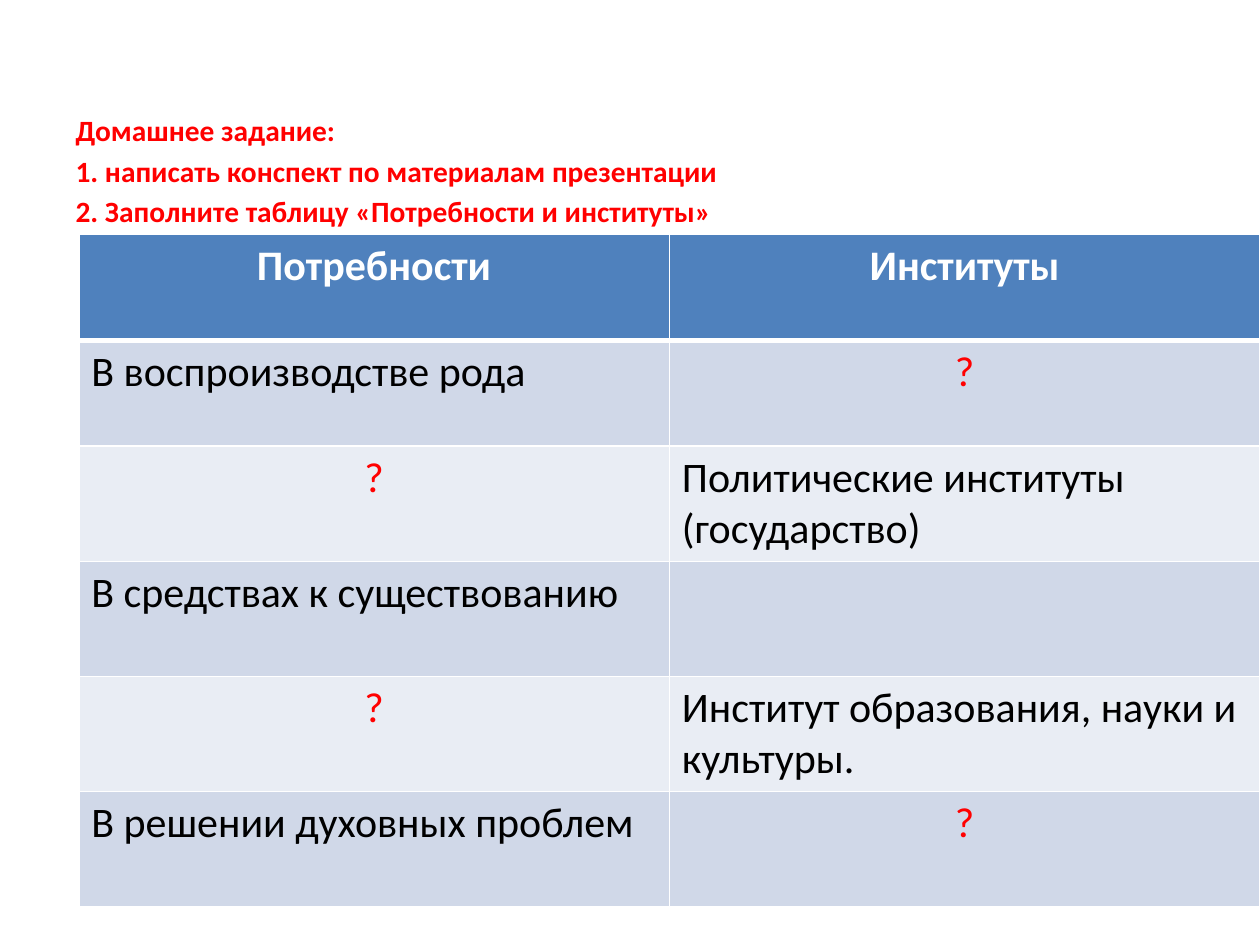
from pptx import Presentation
from pptx.dml.color import RGBColor
from pptx.enum.text import MSO_AUTO_SIZE, PP_ALIGN
from pptx.oxml.ns import qn
from pptx.util import Pt
from lxml.etree import SubElement

theme = {
    "font": "Calibri", "task": 16.8, "cell": 24,
    "red": "FF0000", "white": "FFFFFF", "black": "000000",
    "head": "4F81BD", "bands": ("E9EDF4", "D0D8E8"),
}
tasks = (
    "Домашнее задание:",
    "1. написать конспект по материалам презентации",
    "2. Заполните таблицу «Потребности и институты»",
)
rows = (
    ("Потребности", "Институты"),
    ("В воспроизводстве рода", "?"),
    ("?", "Политические институты (государство)"),
    ("В средствах к существованию", ""),
    ("?", "Институт образования, науки и культуры."),
    ("В решении духовных проблем", "?"),
)
highs = (60.5, 60.5, 65.7, 65.7, 65.7, 65.7)


def style(font, size, color, bold):
    form = {"name": theme["font"], "size": Pt(size), "bold": bold}
    for key, value in form.items():
        setattr(font, key, value)
    font.color.rgb = RGBColor.from_string(color)


def edge(cell, side, width):
    line = SubElement(cell._tc.get_or_add_tcPr(), qn("a:" + side), w=str(Pt(width)))
    fill = SubElement(line, qn("a:solidFill"))
    SubElement(fill, qn("a:srgbClr"), val=theme["white"])


deck = Presentation()
deck.slide_width, deck.slide_height = Pt(720), Pt(540)
slide = deck.slides.add_slide(deck.slide_layouts[1])
title = slide.shapes.title
title.element.getparent().remove(title.element)

body = slide.placeholders[1]
place = {"left": 36, "top": 60.5, "width": 648, "height": 67.7}
for key, value in place.items():
    setattr(body, key, Pt(value))
frame = body.text_frame
frame.text = "\n".join(tasks)
frame.auto_size = MSO_AUTO_SIZE.NONE
for para in frame.paragraphs:
    para.space_before = Pt(3)
    props = para._p.get_or_add_pPr()
    props.set("marL", str(Pt(40.3)))
    props.set("indent", str(-Pt(40.3)))
    SubElement(props, qn("a:buNone"))
    style(para.runs[0].font, theme["task"], theme["red"], True)

table = slide.shapes.add_table(
    len(rows), 2, Pt(45), Pt(134), Pt(675), Pt(sum(highs))).table
for r, texts in enumerate(rows):
    table.rows[r].height = Pt(highs[r])
    for c, text in enumerate(texts):
        cell = table.cell(r, c)
        for side in ("lnL", "lnR", "lnT", "lnB"):
            thick = (r == 0 and side == "lnB") or (r == 1 and side == "lnT")
            edge(cell, side, 3 if thick else 1)
        cell.fill.solid()
        shade = theme["bands"][r % 2] if r else theme["head"]
        cell.fill.fore_color.rgb = RGBColor.from_string(shade)
        cell.text = text
        para = cell.text_frame.paragraphs[0]
        para.alignment = PP_ALIGN.CENTER if r == 0 or text == "?" else PP_ALIGN.LEFT
        color = theme["white"] if r == 0 else theme["red" if text == "?" else "black"]
        style(para.runs[0].font if text else para.font, theme["cell"], color, r == 0)

deck.save("out.pptx")
